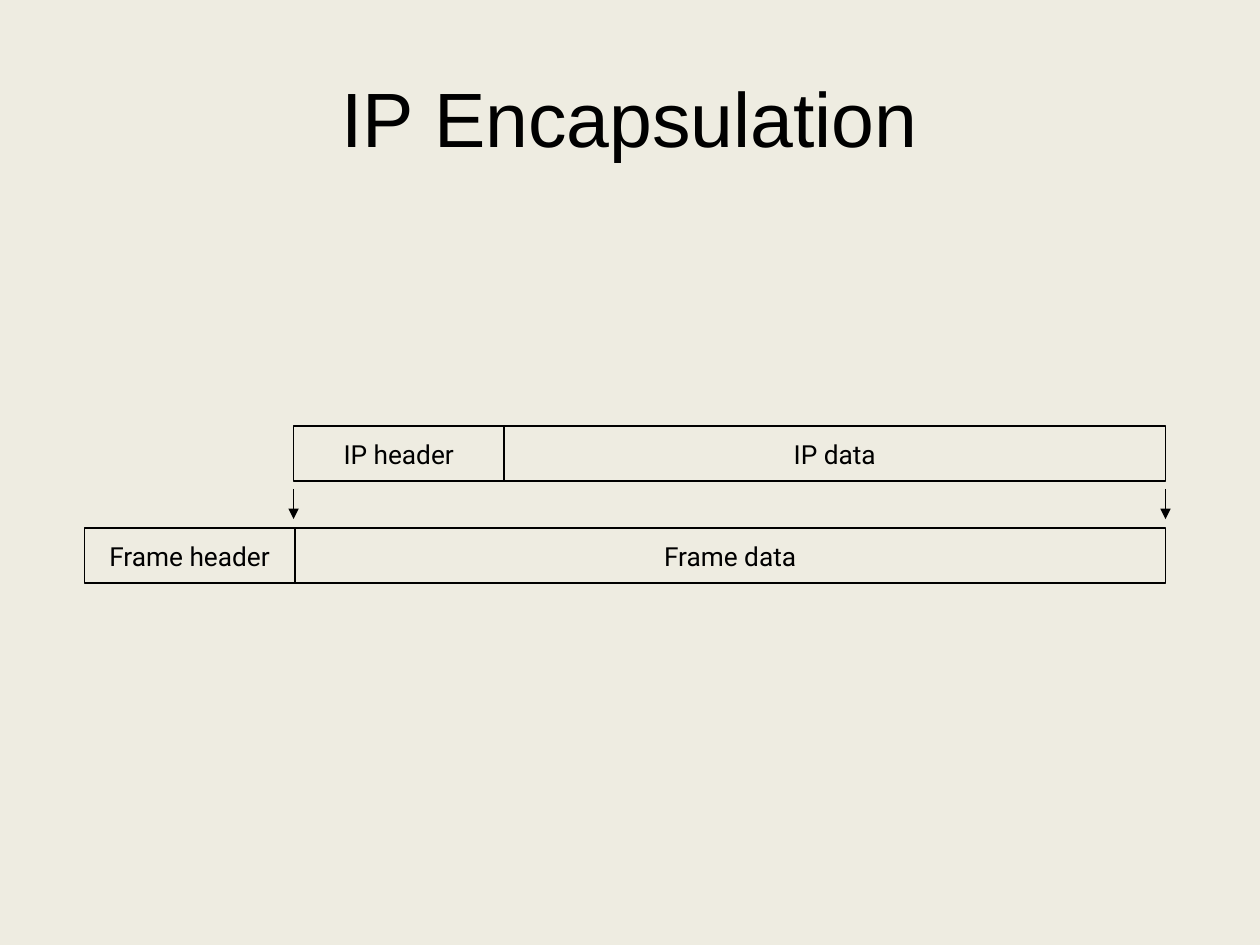
import pptx
import pptx.dml.color
import pptx.enum.shapes
import pptx.enum.text
import pptx.oxml.ns
import pptx.util
from lxml import etree

Inches = pptx.util.Inches
Pt = pptx.util.Pt
BLACK = pptx.dml.color.RGBColor(0x00, 0x00, 0x00)
CREAM = pptx.dml.color.RGBColor(0xEE, 0xEC, 0xE1)

FIELD_HEIGHT = 0.44
HEADER_WIDTH = 1.67
FRAME_LEFT, PACKET_LEFT, RIGHT = 0.67, 2.33, 9.25
PACKET_TOP, FRAME_TOP = 3.38, 4.19
ARROW_TOP, ARROW_BOTTOM = 3.88, 4.12


def write(shape, text, name, size):
    frame = shape.text_frame
    frame.text = text
    frame.vertical_anchor = pptx.enum.text.MSO_ANCHOR.MIDDLE
    para = frame.paragraphs[0]
    para.alignment = pptx.enum.text.PP_ALIGN.CENTER
    para.font.color.rgb = BLACK
    for key, value in {"name": name, "size": Pt(size)}.items():
        setattr(para.font, key, value)


deck = pptx.Presentation()
deck.slide_width, deck.slide_height = Inches(10), Inches(7.5)
page = deck.slides.add_slide(deck.slide_layouts[5])
page.background.fill.solid()
page.background.fill.fore_color.rgb = CREAM

title = page.shapes.title
title_place = {"left": 0.5, "top": 0.3, "width": 9, "height": 1.25}
for key, value in title_place.items():
    setattr(title, key, Inches(value))
write(title, "IP Encapsulation", "Arial", 44)

# Each row is a header field followed by data that runs to the right edge.
for protocol, left, top in [("Frame", FRAME_LEFT, FRAME_TOP), ("IP", PACKET_LEFT, PACKET_TOP)]:
    split = left + HEADER_WIDTH
    for part, start, end in [("header", left, split), ("data", split, RIGHT)]:
        box = page.shapes.add_shape(
            pptx.enum.shapes.MSO_SHAPE.RECTANGLE,
            Inches(start), Inches(top), Inches(end - start), Inches(FIELD_HEIGHT))
        box.shadow.inherit = False
        box.fill.background()
        box.line.color.rgb = BLACK
        box.line.width = Pt(1)
        write(box, f"{protocol} {part}", "Roboto", 15)
        box_format = {
            "word_wrap": False,
            "margin_left": Inches(0.09), "margin_right": Inches(0.09),
            "margin_top": Inches(0.04), "margin_bottom": Inches(0.04),
        }
        for key, value in box_format.items():
            setattr(box.text_frame, key, value)

for x in (PACKET_LEFT, RIGHT):
    arrow = page.shapes.add_connector(
        pptx.enum.shapes.MSO_CONNECTOR.STRAIGHT,
        Inches(x), Inches(ARROW_TOP), Inches(x), Inches(ARROW_BOTTOM))
    arrow.line.color.rgb = BLACK
    arrow.line.width = Pt(1)
    etree.SubElement(arrow.line._get_or_add_ln(), pptx.oxml.ns.qn("a:tailEnd"), type="triangle")
    etree.SubElement(arrow._element.spPr, pptx.oxml.ns.qn("a:effectLst"))

deck.save("out.pptx")
